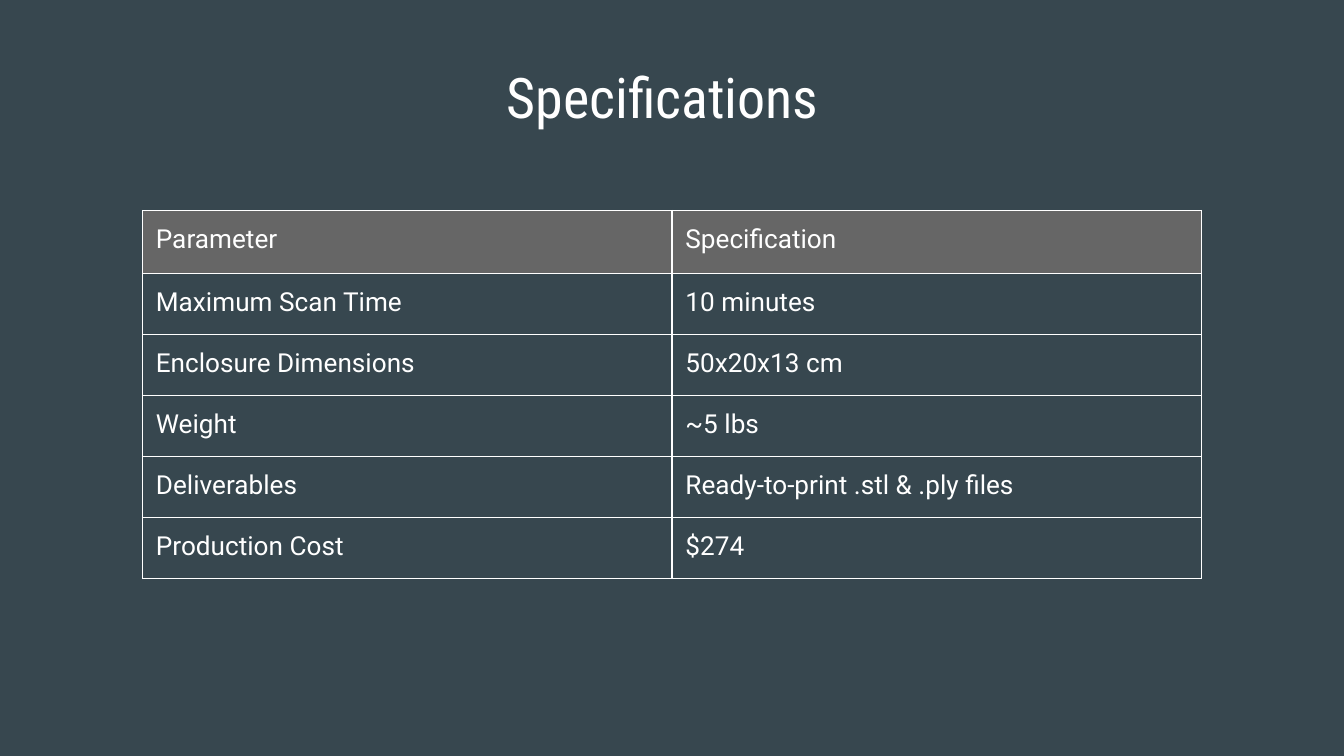
"""Build the product specifications slide with a two-column table."""
from lxml.etree import SubElement
from pptx import Presentation
from pptx.dml.color import RGBColor
from pptx.enum.text import MSO_ANCHOR, MSO_AUTO_SIZE, PP_ALIGN
from pptx.oxml.ns import qn
from pptx.util import Pt

THEME = {
    "background": "37474F",
    "header": "666666",
    "text": "FFFFFF",
    "border": "FFFFFF",
    "border_width": Pt(0.75),
    "title": {"name": "Roboto Condensed", "size": Pt(30), "bold": False},
    "body": {"name": "Roboto", "size": Pt(14), "bold": False},
}
INSETS = {f"margin_{side}": Pt(7.2) for side in ("left", "top", "right", "bottom")}
SPECIFICATIONS = [
    ("Parameter", "Specification"),
    ("Maximum Scan Time", "10 minutes"),
    ("Enclosure Dimensions", "50x20x13 cm"),
    ("Weight", "~5 lbs"),
    ("Deliverables", "Ready-to-print .stl & .ply files"),
    ("Production Cost", "$274"),
]
COLUMN_WIDTH = Pt(283.7)
ROW_HEIGHTS = [Pt(33.7)] + [Pt(32.7)] * (len(SPECIFICATIONS) - 1)


def apply(target, values):
    for attribute, value in values.items():
        setattr(target, attribute, value)


def style_text(paragraph, font_format):
    apply(paragraph.font, font_format)
    paragraph.font.color.rgb = RGBColor.from_string(THEME["text"])


presentation = Presentation()
apply(presentation, {"slide_width": Pt(720), "slide_height": Pt(405)})
slide = presentation.slides.add_slide(presentation.slide_layouts[5])
slide.background.fill.solid()
slide.background.fill.fore_color.rgb = RGBColor.from_string(THEME["background"])

title = slide.shapes.title
apply(title, {"left": Pt(196), "top": Pt(24.5), "width": Pt(318), "height": Pt(54)})
apply(title.text_frame, {
    "text": "Specifications",
    "word_wrap": True,
    "auto_size": MSO_AUTO_SIZE.NONE,
    "vertical_anchor": MSO_ANCHOR.MIDDLE,
    **INSETS,
})
heading = title.text_frame.paragraphs[0]
heading.alignment = PP_ALIGN.CENTER
style_text(heading, THEME["title"])

specifications = slide.shapes.add_table(
    len(SPECIFICATIONS), 2, Pt(76.3), Pt(112.8), COLUMN_WIDTH * 2, sum(ROW_HEIGHTS)
).table
apply(specifications, {"first_row": False, "horz_banding": False})
for column in specifications.columns:
    column.width = COLUMN_WIDTH

for row_index, (entries, height) in enumerate(zip(SPECIFICATIONS, ROW_HEIGHTS)):
    specifications.rows[row_index].height = height
    for column_index, entry in enumerate(entries):
        cell = specifications.cell(row_index, column_index)
        apply(cell, {"text": entry, "vertical_anchor": MSO_ANCHOR.TOP, **INSETS})
        style_text(cell.text_frame.paragraphs[0], THEME["body"])
        properties = cell._tc.get_or_add_tcPr()
        for edge in ("a:lnL", "a:lnR", "a:lnT", "a:lnB"):
            border = SubElement(properties, qn(edge), w=str(THEME["border_width"]))
            border_fill = SubElement(border, qn("a:solidFill"))
            SubElement(border_fill, qn("a:srgbClr"), val=THEME["border"])
        if row_index == 0:
            cell.fill.solid()
            cell.fill.fore_color.rgb = RGBColor.from_string(THEME["header"])
        else:
            cell.fill.background()

presentation.save("out.pptx")
